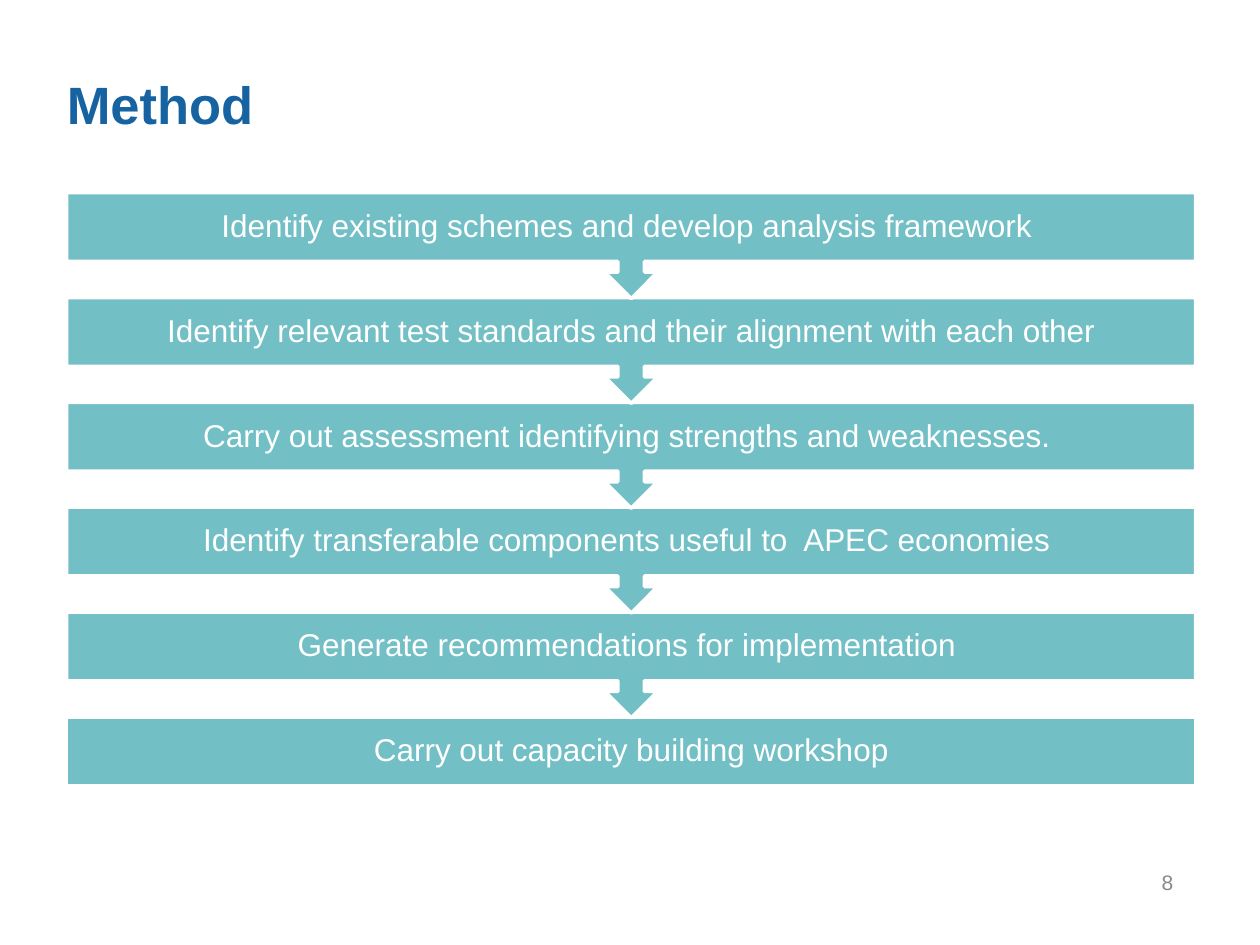
import pptx
import pptx.util
import pptx.dml.color
import pptx.enum.shapes
import pptx.enum.text

Inches, Pt = pptx.util.Inches, pptx.util.Pt
RGBColor = pptx.dml.color.RGBColor
MSO_SHAPE = pptx.enum.shapes.MSO_SHAPE
ANCHOR = pptx.enum.text.MSO_ANCHOR
ALIGN = pptx.enum.text.PP_ALIGN

BLUE = RGBColor(0x17, 0x62, 0xA1)
TEAL = RGBColor(0x72, 0xBF, 0xC5)
GRAY = RGBColor(0x89, 0x89, 0x89)
WHITE = RGBColor(0xFF, 0xFF, 0xFF)

# Content
TITLE = "Method"
PAGE_NUMBER = "8"
STEPS = [
    "Identify existing schemes and develop analysis framework ",
    "Identify relevant test standards and their alignment with each other",
    "Carry out assessment identifying strengths and weaknesses. ",
    "Identify transferable components useful to  APEC economies ",
    "Generate recommendations for implementation ",
    "Carry out capacity building workshop",
]

# Formats
TITLE_FONT = {"size": Pt(30), "bold": True}
NUMBER_FONT = {"size": Pt(12)}
STEP_FONT = {"size": Pt(18)}

# Layout
LEFT, TOP, WIDTH = 0.53, 1.53, 8.96
PITCH, CALLOUT_H, BOX_H = 0.832, 0.84, 0.55
INSET = 0.14


def write(sp, text, font, color, align, anchor, inset=None):
    tf = sp.text_frame
    tf.word_wrap = True
    tf.vertical_anchor = anchor
    if inset is not None:
        for side in ("left", "top", "right", "bottom"):
            setattr(tf, f"margin_{side}", Inches(inset))
    p = tf.paragraphs[0]
    p.alignment = align
    r = p.add_run()
    r.text = text
    for name, value in {"name": "Arial", **font}.items():
        setattr(r.font, name, value)
    r.font.color.rgb = color
    return p


prs = pptx.Presentation()
prs.slide_width, prs.slide_height = Inches(10), Inches(7.5)
s = prs.slides.add_slide(prs.slide_layouts[6])

# Title and page number
sp = s.shapes.add_textbox(Inches(LEFT), Inches(0.57), Inches(8.65), Inches(0.47))
write(sp, TITLE, TITLE_FONT, BLUE, ALIGN.LEFT, ANCHOR.TOP, 0)
sp = s.shapes.add_textbox(Inches(7.08), Inches(6.75), Inches(2.33), Inches(0.4))
write(sp, PAGE_NUMBER, NUMBER_FONT, GRAY, ALIGN.RIGHT, ANCHOR.BOTTOM)

# Steps, last one at the back so that each arrow lies over the next box
last = len(STEPS) - 1
for i in range(last, -1, -1):
    kind, height = MSO_SHAPE.DOWN_ARROW_CALLOUT, CALLOUT_H
    if i == last:
        kind, height = MSO_SHAPE.RECTANGLE, BOX_H
    sp = s.shapes.add_shape(kind, Inches(LEFT), Inches(TOP + i * PITCH),
                            Inches(WIDTH), Inches(height))
    sp.shadow.inherit = False
    sp.fill.solid()
    sp.fill.fore_color.rgb = TEAL
    sp.line.color.rgb = WHITE
    sp.line.width = Pt(2)
    p = write(sp, STEPS[i], STEP_FONT, WHITE, ALIGN.CENTER, ANCHOR.MIDDLE, INSET)
    p.line_spacing = 0.9

prs.save("out.pptx")
